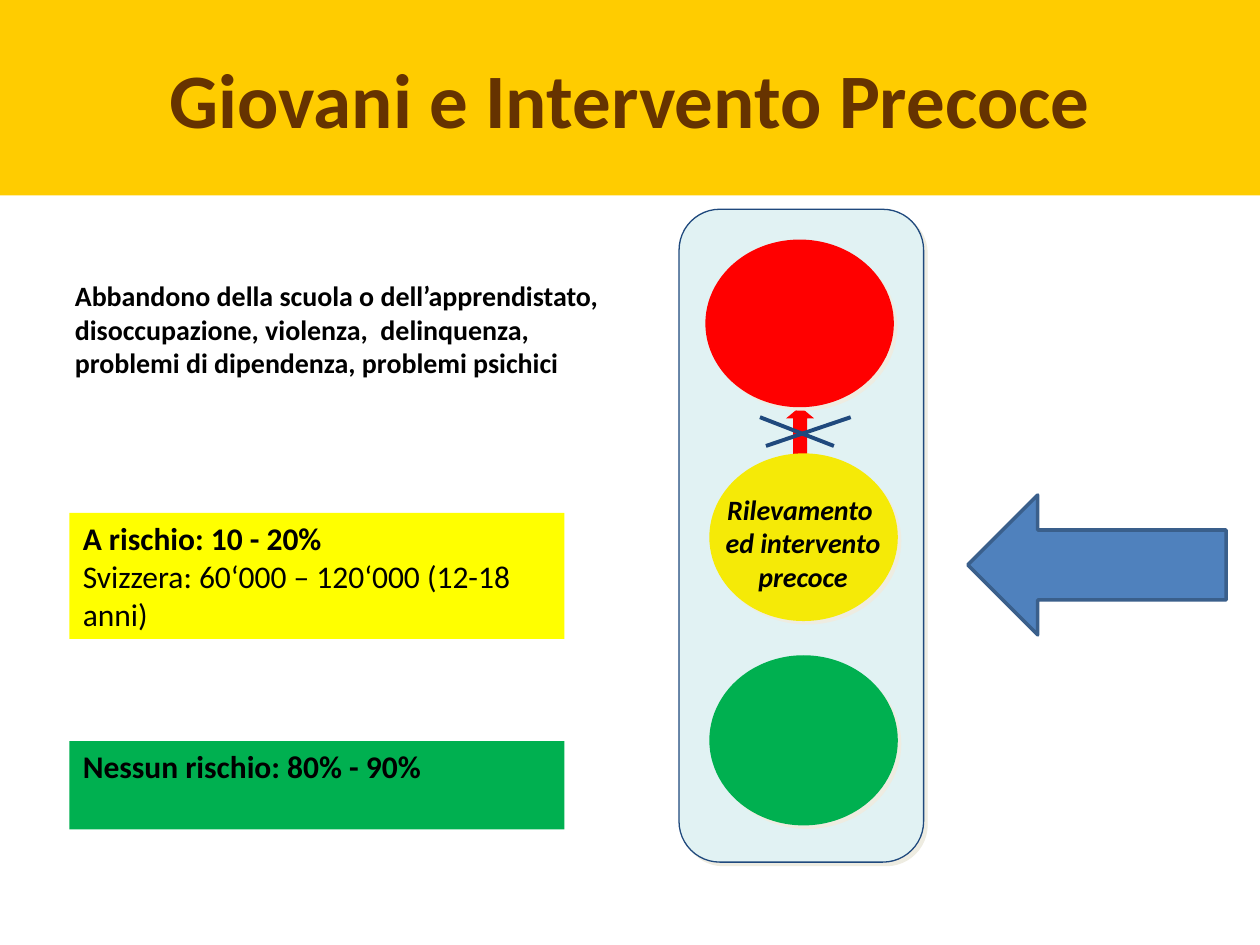
from lxml import etree
from pptx import Presentation
from pptx.dml.color import RGBColor
from pptx.enum.shapes import MSO_CONNECTOR as CONN, MSO_SHAPE as SHAPE
from pptx.enum.text import MSO_ANCHOR as ANCHOR, MSO_AUTO_SIZE as AUTO, PP_ALIGN as ALIGN
from pptx.oxml import parse_xml
from pptx.oxml.ns import nsdecls, qn
from pptx.util import Cm, Pt

SHADOW = (
    f'<a:effectLst {nsdecls("a")}><a:outerShdw dist="35560" dir="2700000" algn="ctr" '
    'rotWithShape="0"><a:srgbClr val="EEECE1"/></a:outerShdw></a:effectLst>'
)
NAVY = "1F497D"
GREEN = "00B050"


def rgb(value):
    return RGBColor.from_string(value)


def paint(sp, color):
    sp.fill.solid()
    sp.fill.fore_color.rgb = rgb(color)


def add_shape(s, kind, box, fill, line=None, width=0, shadow=False):
    sp = s.shapes.add_shape(kind, *map(Cm, box))
    paint(sp, fill)
    if line:
        sp.line.color.rgb = rgb(line)
        sp.line.width = Pt(width)
    else:
        sp.line.fill.background()
    if shadow:
        sp._element.spPr.append(parse_xml(SHADOW))
    else:
        sp.shadow.inherit = False
    return sp


def add_line(s, start, end):
    c = s.shapes.add_connector(CONN.STRAIGHT, *map(Cm, start + end))
    c.line.color.rgb = rgb(NAVY)
    c.line.width = Pt(2.25)
    etree.SubElement(c._element.spPr, qn("a:effectLst"))


def write(tf, lines, size, align=ALIGN.LEFT, color="000000", italic=False):
    for i, (text, bold) in enumerate(lines):
        p = tf.paragraphs[0] if i == 0 else tf.add_paragraph()
        p.add_run().text = text
        p.alignment = align
        p.font.name = "Calibri"
        p.font.size = Pt(size)
        p.font.bold = bold
        p.font.italic = italic
        p.font.color.rgb = rgb(color)


def add_box(s, box, fill, lines, size):
    tf = add_shape(s, SHAPE.RECTANGLE, box, fill).text_frame
    tf.word_wrap = True
    tf.vertical_anchor = ANCHOR.TOP
    tf.margin_left = tf.margin_right = Cm(0.27)
    write(tf, lines, size)


def add_title(s, text):
    sp = s.shapes.title
    sp.left, sp.top, sp.width, sp.height = map(Cm, (0, 0, 25.4, 3.94))
    paint(sp, "FFCC00")
    tf = sp.text_frame
    tf.auto_size = AUTO.NONE
    tf.vertical_anchor = ANCHOR.MIDDLE
    write(tf, [(text, True)], 44, ALIGN.CENTER, "663300")


def add_traffic_light(s):
    add_shape(s, SHAPE.ROUNDED_RECTANGLE, (13.69, 4.22, 4.93, 13.16),
              "E1F2F3", NAVY, 0.75, shadow=True)
    arrow = add_shape(s, SHAPE.UP_ARROW, (15.85, 8.2, 0.56, 0.99), "FF0000")
    arrow.adjustments[1] = 0.417
    for x, y, h, color in (
        (14.22, 4.83, 3.38, "FF0000"),
        (14.3, 9.14, 3.38, "F5EA07"),
        (14.3, 13.21, 3.43, GREEN),
    ):
        add_shape(s, SHAPE.OVAL, (x, y, 3.8, h), color, shadow=True)
    add_line(s, (15.44, 8.99), (17.15, 8.41))
    add_line(s, (15.32, 8.41), (16.81, 8.99))

    label = s.shapes.add_textbox(*map(Cm, (13.79, 9.8, 4.8, 2.29)))
    label.text_frame.word_wrap = False
    lines = [(text, True) for text in ("Rilevamento ", "ed intervento", "precoce")]
    write(label.text_frame, lines, 16, ALIGN.CENTER, italic=True)


def main():
    prs = Presentation()
    prs.slide_width, prs.slide_height = Cm(25.4), Cm(19.05)
    s = prs.slides.add_slide(prs.slide_layouts[5])

    add_title(s, "Giovani e Intervento Precoce")
    add_traffic_light(s)
    add_box(s, (1.24, 5.49, 11.4, 3.63), "FFFFFF", [
        ("Abbandono della scuola o dell’apprendistato, disoccupazione, violenza,  "
         "delinquenza, problemi di dipendenza, problemi psichici", True),
    ], 16)
    add_box(s, (1.4, 10.34, 9.98, 2.54), "FFFF00", [
        ("A rischio: 10 - 20%", True),
        ("Svizzera: 60‘000 – 120‘000 (12-18 anni)", False),
    ], 18)
    add_box(s, (1.4, 14.94, 9.98, 1.78), GREEN, [("Nessun rischio: 80% - 90%", True)], 18)
    add_shape(s, SHAPE.LEFT_ARROW, (19.51, 9.98, 5.21, 2.82), "4F81BD", "3A5F8B", 2)

    prs.save("out.pptx")


if __name__ == "__main__":
    main()
